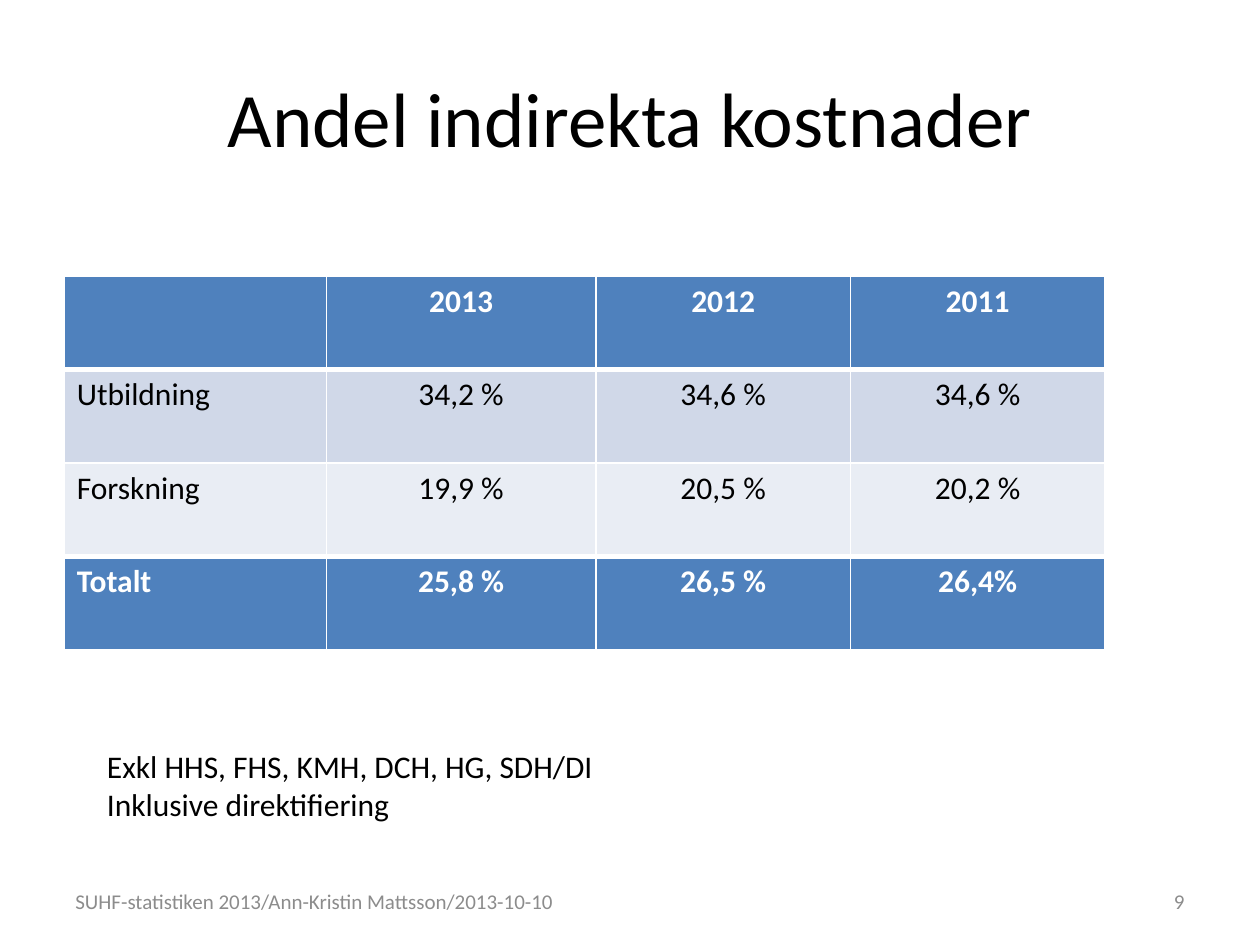
"""Build a slide with a table of indirect cost shares."""
from lxml import etree
from pptx import Presentation
from pptx.dml.color import RGBColor
from pptx.enum.text import MSO_ANCHOR, PP_ALIGN
from pptx.oxml.ns import qn
from pptx.util import Inches, Pt

LEFT, CENTER, RIGHT = PP_ALIGN.LEFT, PP_ALIGN.CENTER, PP_ALIGN.RIGHT
TOP, MIDDLE = MSO_ANCHOR.TOP, MSO_ANCHOR.MIDDLE
COLORS = {
    "black": "000000",
    "white": "FFFFFF",
    "grey": "8C8C8C",
    "blue": "4F81BD",
    "band_dark": "D0D8E8",
    "band_light": "E9EDF4",
}


def add_text(paragraph, text, size, color, align=LEFT, bold=False):
    paragraph.alignment = align
    run = paragraph.add_run()
    run.text = text
    run.font.name = "Calibri"
    run.font.size = Pt(size)
    run.font.bold = bold
    run.font.color.rgb = RGBColor.from_string(COLORS[color])


def add_border(cell, side, width):
    properties = cell._tc.get_or_add_tcPr()
    line = etree.SubElement(properties, qn(f"a:ln{side}"), w=str(Pt(width)))
    fill = etree.SubElement(line, qn("a:solidFill"))
    etree.SubElement(fill, qn("a:srgbClr"), val=COLORS["white"])


presentation = Presentation()
presentation.slide_width = Inches(10)
presentation.slide_height = Inches(7.5)
slide = presentation.slides.add_slide(presentation.slide_layouts[6])

text_boxes = [
    (0.5, 0.3, 9, 1.25, ["Andel indirekta kostnader"], 44, "black", CENTER, MIDDLE, True),
    (0.5, 6.95, 4.03, 0.4, ["SUHF-statistiken 2013/Ann-Kristin Mattsson/2013-10-10"],
     12, "grey", LEFT, MIDDLE, True),
    (7.17, 6.95, 2.33, 0.4, ["9"], 12, "grey", RIGHT, MIDDLE, True),
    (0.75, 5.88, 4.11, 0.71, ["Exkl HHS, FHS, KMH, DCH, HG, SDH/DI", "Inklusive direktifiering"],
     18, "black", LEFT, TOP, False),
]
for left, top, width, height, lines, size, color, align, anchor, wrap in text_boxes:
    text_box = slide.shapes.add_textbox(Inches(left), Inches(top), Inches(width), Inches(height))
    text_frame = text_box.text_frame
    text_frame.word_wrap = wrap
    text_frame.vertical_anchor = anchor
    for index, text in enumerate(lines):
        paragraph = text_frame.add_paragraph() if index else text_frame.paragraphs[0]
        add_text(paragraph, text, size, color, align)

table_rows = [
    ["", "2013", "2012", "2011"],
    ["Utbildning", "34,2 %", "34,6 %", "34,6 %"],
    ["Forskning", "19,9 %", "20,5 %", "20,2 %"],
    ["Totalt", "25,8 %", "26,5 %", "26,4%"],
]
row_fills = ["blue", "band_dark", "band_light", "blue"]
rule_widths = [1, 3, 1, 3, 1]
column_widths = [2.08, 2.14, 2.02, 2.02]

table = slide.shapes.add_table(
    len(table_rows), len(column_widths), Inches(0.51), Inches(2.19), Inches(8.26), Inches(2.97)
).table
for column, width in zip(table.columns, column_widths):
    column.width = Inches(width)

for row_index, (values, fill) in enumerate(zip(table_rows, row_fills)):
    emphasized = fill == "blue"
    for column_index, value in enumerate(values):
        cell = table.cell(row_index, column_index)
        add_border(cell, "L", 1)
        add_border(cell, "R", 1)
        add_border(cell, "T", rule_widths[row_index])
        add_border(cell, "B", rule_widths[row_index + 1])
        cell.fill.solid()
        cell.fill.fore_color.rgb = RGBColor.from_string(COLORS[fill])
        if value:
            add_text(cell.text_frame.paragraphs[0], value, 18,
                     "white" if emphasized else "black",
                     CENTER if column_index else LEFT, emphasized)

presentation.save("out.pptx")
